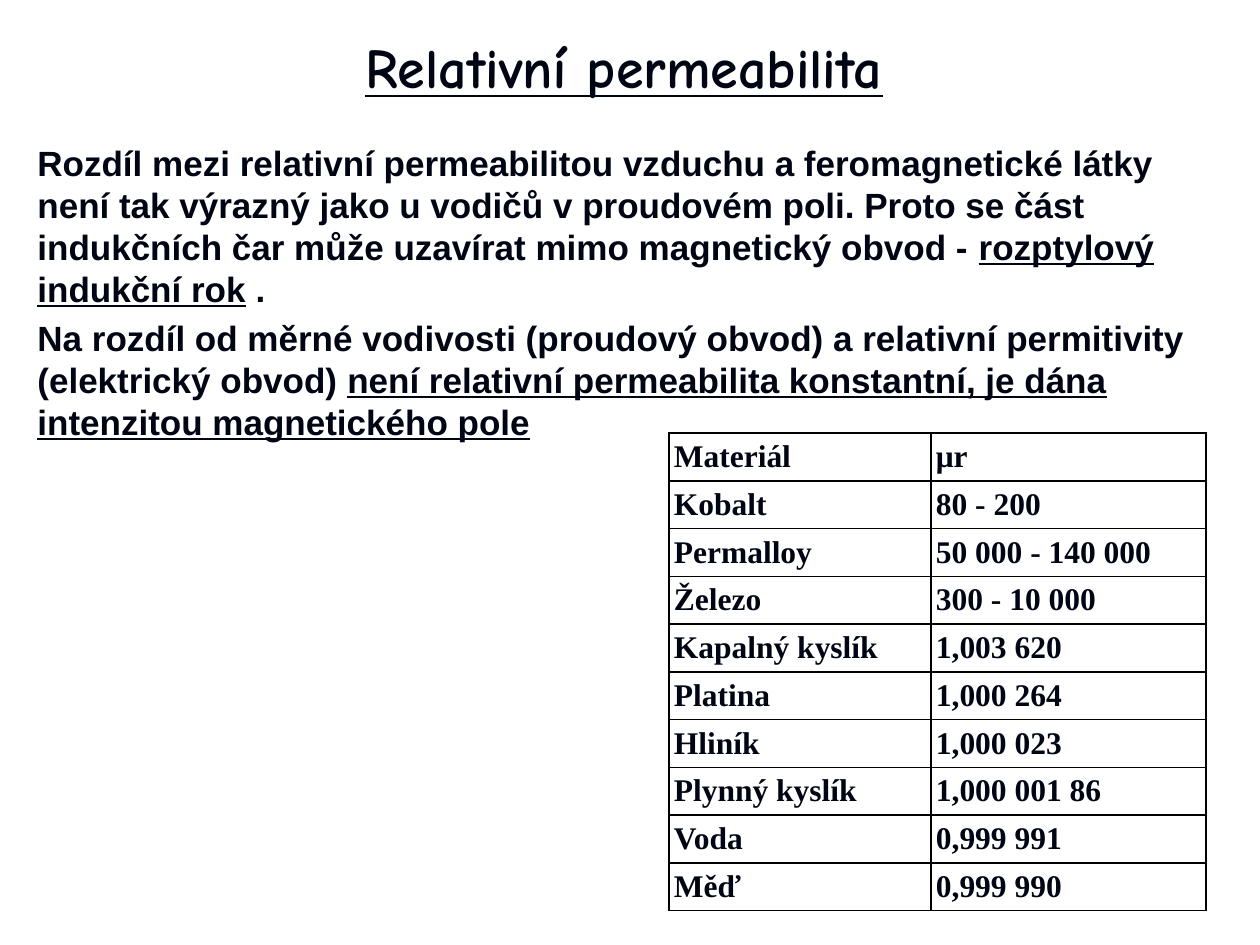
import pptx
import pptx.dml.color
import pptx.enum.text
import pptx.oxml
import pptx.oxml.ns
import pptx.util

EMU_PER_PX = 914400 // 126
COLORS = {"text": "000514", "paper": "FFFFFF", "border": "000000"}

# Each paragraph is a list of (wording, underlined) runs.
EXPLANATION = [
    [("Rozdíl mezi relativní permeabilitou vzduchu a feromagnetické látky není tak "
      "výrazný jako u vodičů v proudovém poli. Proto se část indukčních čar může "
      "uzavírat mimo magnetický obvod - ", False),
     ("rozptylový indukční rok", True),
     (" .", False)],
    [("Na rozdíl od měrné vodivosti (proudový obvod) a relativní permitivity "
      "(elektrický obvod) ", False),
     ("není relativní permeabilita konstantní, je dána intenzitou magnetického pole", True)],
]
PERMEABILITIES = [
    ("Materiál", "μr"),
    ("Kobalt", "80 - 200"),
    ("Permalloy", "50 000 - 140 000"),
    ("Železo", "300 - 10 000"),
    ("Kapalný kyslík", "1,003 620"),
    ("Platina", "1,000 264"),
    ("Hliník", "1,000 023"),
    ("Plynný kyslík", "1,000 001 86"),
    ("Voda", "0,999 991"),
    ("Měď", "0,999 990"),
]


def px(length):
    return pptx.util.Emu(round(length * EMU_PER_PX))


def rgb(name):
    return pptx.dml.color.RGBColor.from_string(COLORS[name])


class SlideBuilder:
    """Holds the text style and the slide being filled."""

    def __init__(self, slide):
        self.slide = slide

    def style(self, paragraph, face, size):
        paragraph.font.name = face
        paragraph.font.size = pptx.util.Pt(size)
        paragraph.font.bold = True
        paragraph.font.color.rgb = rgb("text")

    def title(self, wording, left, top, width, height):
        heading = self.slide.shapes.title
        heading.left, heading.top = px(left), px(top)
        heading.width, heading.height = px(width), px(height)
        frame = heading.text_frame
        frame.text = wording
        frame.vertical_anchor = pptx.enum.text.MSO_ANCHOR.MIDDLE
        paragraph = frame.paragraphs[0]
        paragraph.alignment = pptx.enum.text.PP_ALIGN.CENTER
        self.style(paragraph, "Comic Neue", 32)
        paragraph.font.underline = True

    def text(self, paragraphs, left, top, width, height):
        box = self.slide.shapes.add_textbox(px(left), px(top), px(width), px(height))
        frame = box.text_frame
        frame.word_wrap = True
        for index, runs in enumerate(paragraphs):
            paragraph = frame.add_paragraph() if index else frame.paragraphs[0]
            self.style(paragraph, "Arial", 20)
            paragraph.space_before = pptx.util.Pt(4)
            for wording, underlined in runs:
                run = paragraph.add_run()
                run.text = wording
                run.font.underline = underlined

    def table(self, rows, left, top, column_widths, height):
        frame = self.slide.shapes.add_table(
            len(rows), len(column_widths), px(left), px(top),
            px(sum(column_widths)), px(height))
        table = frame.table
        table.first_row = table.horz_banding = False
        for column, width in zip(table.columns, column_widths):
            column.width = px(width)
        for row, wordings in zip(table.rows, rows):
            row.height = px(height / len(rows))
            for cell, wording in zip(row.cells, wordings):
                self.cell(cell, wording)

    def cell(self, cell, wording):
        cell.text = wording
        self.style(cell.text_frame.paragraphs[0], "Times New Roman", 18)
        cell.vertical_anchor = pptx.enum.text.MSO_ANCHOR.MIDDLE
        cell.margin_left = cell.margin_right = px(5)
        cell.margin_top = cell.margin_bottom = px(5)
        self.borders(cell)
        cell.fill.solid()
        cell.fill.fore_color.rgb = rgb("paper")

    def borders(self, cell):
        properties = cell._tc.get_or_add_tcPr()
        for side in ("lnL", "lnR", "lnT", "lnB"):
            properties.append(pptx.oxml.parse_xml(
                f'<a:{side} {pptx.oxml.ns.nsdecls("a")} w="12700"><a:solidFill>'
                f'<a:srgbClr val="{COLORS["border"]}"/></a:solidFill></a:{side}>'))


def main():
    presentation = pptx.Presentation()
    presentation.slide_width = pptx.util.Inches(10)
    presentation.slide_height = pptx.util.Inches(7.5)
    title_only = presentation.slide_layouts[5]
    builder = SlideBuilder(presentation.slides.add_slide(title_only))
    builder.title("Relativní permeabilita", 33, 18, 1182, 97)
    builder.text(EXPLANATION, 25, 135, 1181, 315)
    builder.table(PERMEABILITIES, 669, 433, (262, 275), 478)
    presentation.save("out.pptx")


if __name__ == "__main__":
    main()
